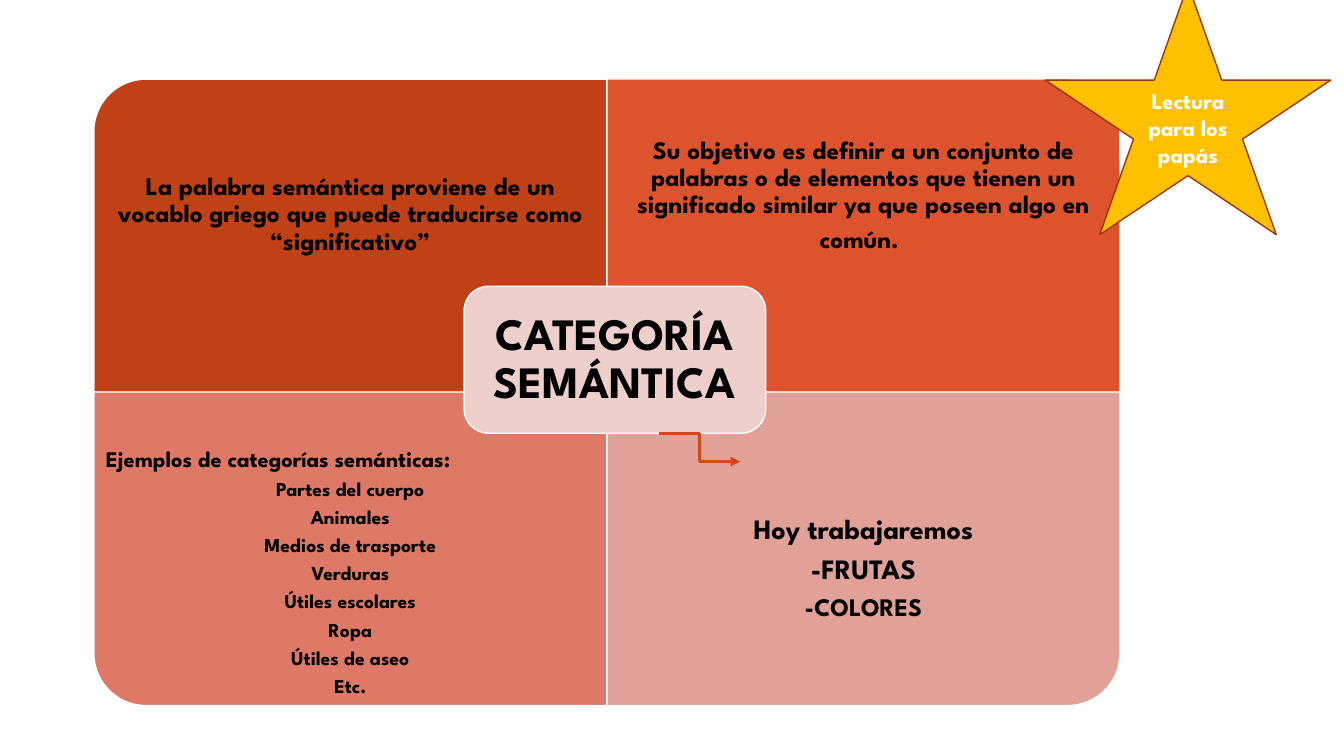
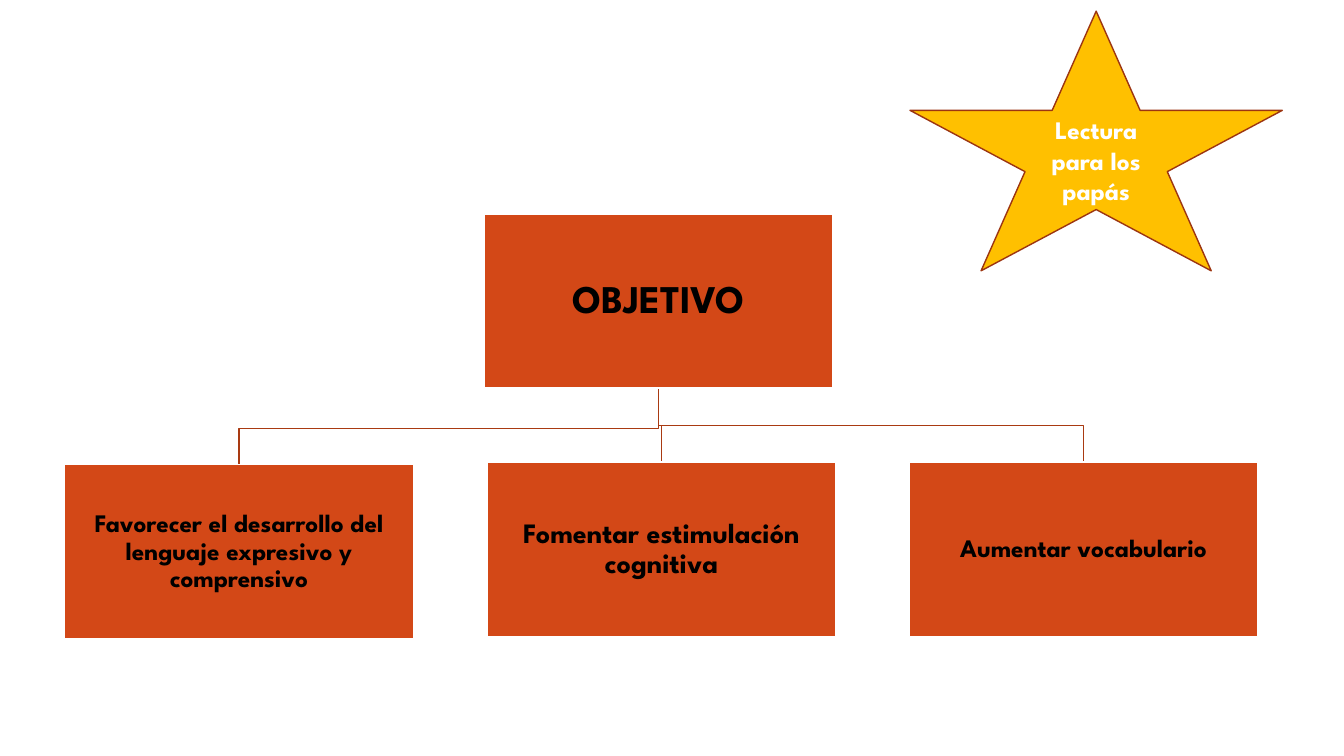
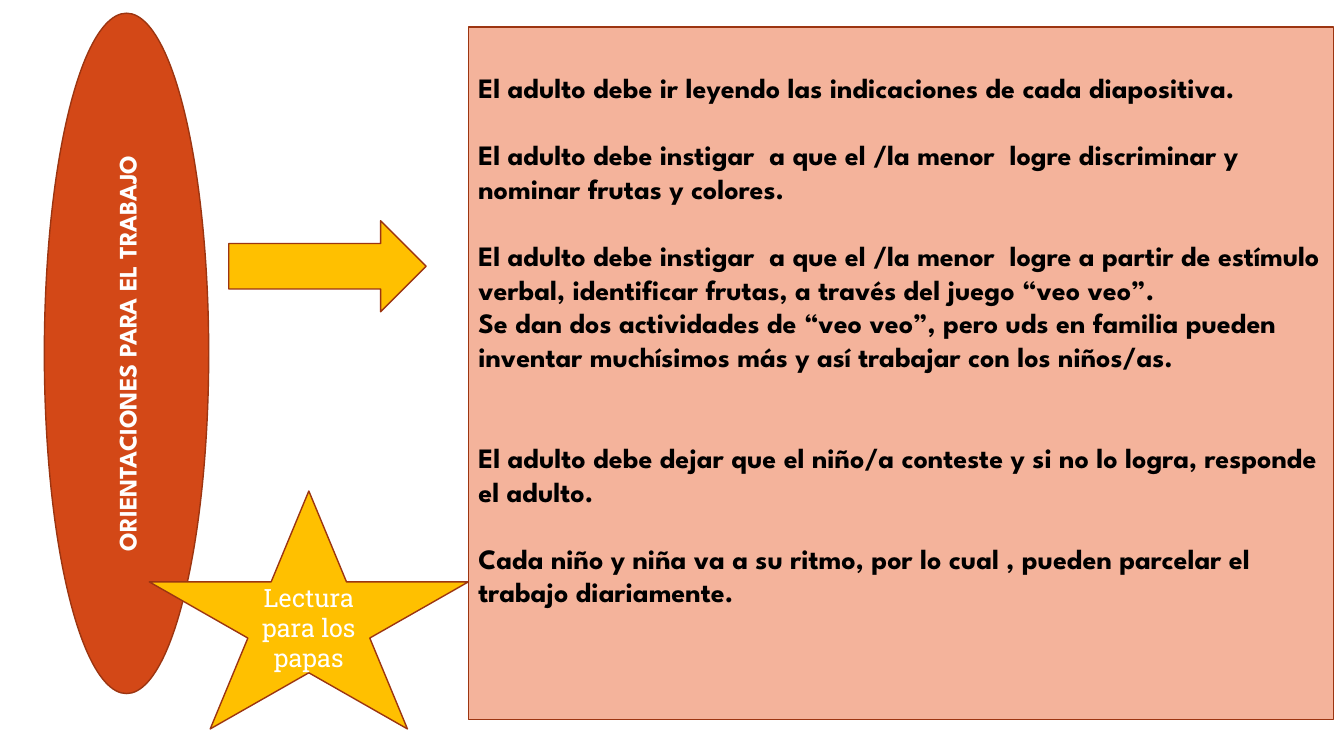
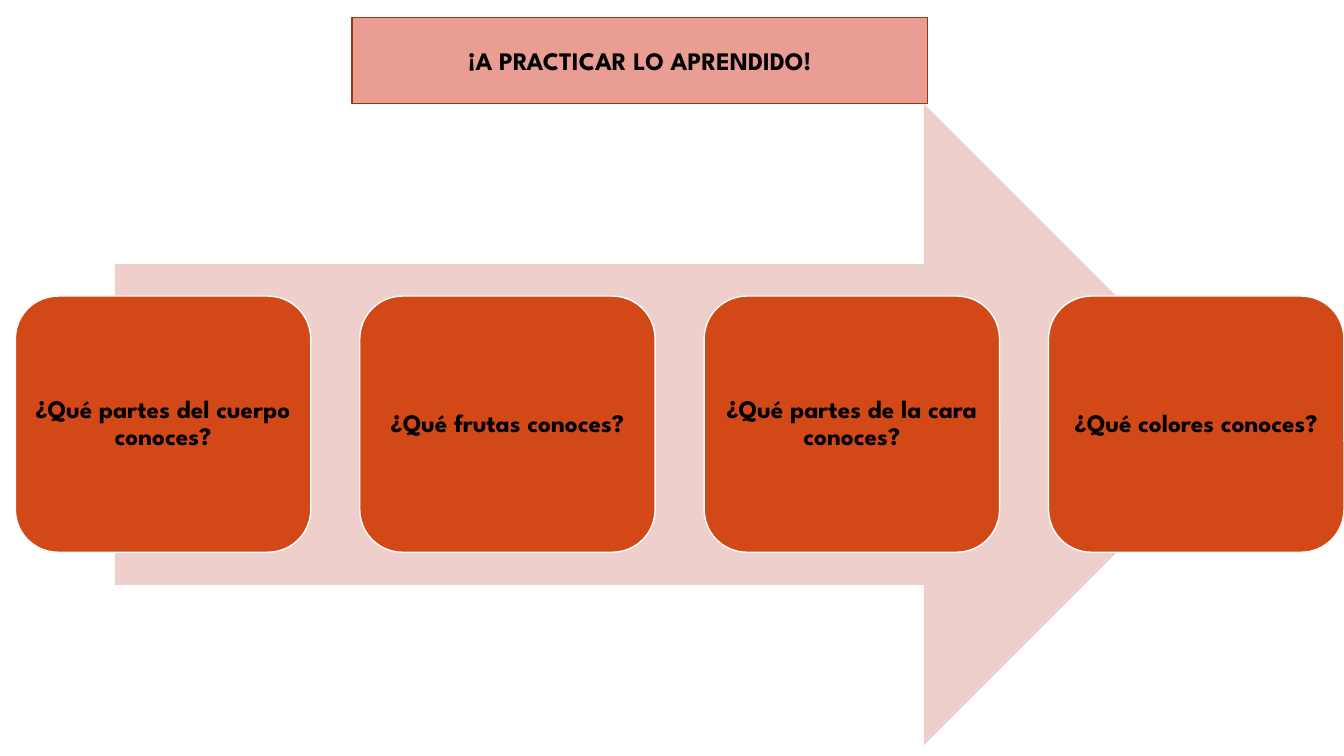
from dataclasses import dataclass

from lxml import etree
from pptx import Presentation
from pptx.dml.color import RGBColor
from pptx.enum.shapes import MSO_CONNECTOR, MSO_SHAPE
from pptx.enum.text import MSO_ANCHOR, PP_ALIGN
from pptx.oxml.ns import qn
from pptx.shapes.base import BaseShape
from pptx.slide import Slide
from pptx.text.text import TextFrame
from pptx.util import Pt

RECT = MSO_SHAPE.RECTANGLE
ROUND = MSO_SHAPE.ROUNDED_RECTANGLE
CORNER = MSO_SHAPE.ROUND_1_RECTANGLE
STAR = MSO_SHAPE.STAR_5_POINT
ARROW = MSO_SHAPE.RIGHT_ARROW
OVAL = MSO_SHAPE.OVAL
ELBOW = MSO_CONNECTOR.ELBOW
LEFT, MID = PP_ALIGN.LEFT, PP_ALIGN.CENTER
CENTER = MSO_ANCHOR.MIDDLE

SANS, SLAB = "League Spartan", "Roboto Slab"
BLACK, WHITE = "000000", "FFFFFF"
RUST, EDGE, LINK = "D34817", "9C3511", "A93A12"
GOLD, BLUSH, ROSE, PEACH = "FFC000", "EFCFCC", "E99D93", "F4B39B"
TIGHT = 0.9


@dataclass(frozen=True)
class Box:
    left: float
    top: float
    width: float
    height: float


@dataclass(frozen=True)
class Run:
    text: str
    size: float = 18
    hue: str = BLACK
    font: str = SANS
    bold: bool = True


@dataclass(frozen=True)
class Para:
    runs: tuple[Run, ...]
    align: PP_ALIGN = MID
    lead: float = 1
    before: float = 0
    after: float = 0


@dataclass(frozen=True)
class Pad:
    side: float = 7.2
    top: float = 3.6
    base: float = 3.6


@dataclass(frozen=True)
class Cell:
    fill: str
    turn: int
    pad: Pad
    paras: list[Para]


def color(code: str) -> RGBColor:
    return RGBColor.from_string(code)


def plain(text: str, size: float = 18, hue: str = BLACK) -> Para:
    return Para((Run(text, size, hue),))


def tight(text: str, size: float = 18, align: PP_ALIGN = MID) -> Para:
    return Para((Run(text, size),), align, TIGHT, after=0.35 * size)


def even(gap: float) -> Pad:
    return Pad(gap, gap, gap)


def write(frame: TextFrame, paras: list[Para], pad: Pad) -> None:
    frame.word_wrap = True
    frame.vertical_anchor = CENTER
    frame.margin_left = frame.margin_right = Pt(pad.side)
    frame.margin_top, frame.margin_bottom = Pt(pad.top), Pt(pad.base)
    for i, para in enumerate(paras):
        item = frame.add_paragraph() if i else frame.paragraphs[0]
        item.alignment = para.align
        item.line_spacing = para.lead
        item.space_before, item.space_after = Pt(para.before), Pt(para.after)
        for part in para.runs:
            run = item.add_run()
            run.text = part.text
            run.font.name = part.font
            run.font.size = Pt(part.size)
            run.font.bold = part.bold
            run.font.color.rgb = color(part.hue)


def draw(slide: Slide, kind: MSO_SHAPE, box: Box, fill: str, line: str | None = EDGE,
         paras: list[Para] | None = None, pad: Pad = Pad(), turn: int = 0) -> BaseShape:
    wide, high = box.width, box.height
    if turn % 180:
        wide, high = high, wide
    left = box.left + (box.width - wide) / 2
    top = box.top + (box.height - high) / 2
    shape = slide.shapes.add_shape(kind, Pt(left), Pt(top), Pt(wide), Pt(high))
    shape.rotation = turn
    shape.shadow.inherit = False
    shape.fill.solid()
    shape.fill.fore_color.rgb = color(fill)
    if line:
        shape.line.color.rgb = color(line)
        shape.line.width = Pt(1)
    else:
        shape.line.fill.background()
    if paras:
        write(shape.text_frame, paras, pad)
    return shape


def label(slide: Slide, box: Box, paras: list[Para], pad: Pad) -> None:
    frame = slide.shapes.add_textbox(
        Pt(box.left), Pt(box.top), Pt(box.width), Pt(box.height)).text_frame
    write(frame, paras, pad)


def star(slide: Slide, box: Box, run: Run) -> None:
    draw(slide, STAR, box, GOLD, paras=[Para((run,))])


def bent(slide: Slide, x: float, y: float, wide: float, high: float) -> None:
    link = slide.shapes.add_connector(ELBOW, Pt(x), Pt(y), Pt(x + wide), Pt(y + high))
    link.line.color.rgb = color(RUST)
    link.line.width = Pt(2.25)
    etree.SubElement(link.line._get_or_add_ln(), qn("a:tailEnd"), type="triangle")
    etree.SubElement(link._element.spPr, qn("a:effectLst"))


def branch(slide: Slide, root: Box, leaf: Box) -> None:
    start = root.left + root.width / 2
    end = leaf.left + leaf.width / 2
    bend = leaf.top - 26
    pen = slide.shapes.build_freeform(Pt(start), Pt(root.top + root.height))
    pen.add_line_segments(
        [(Pt(start), Pt(bend)), (Pt(end), Pt(bend)), (Pt(end), Pt(leaf.top))], close=False)
    shape = pen.convert_to_shape()
    shape.shadow.inherit = False
    shape.fill.background()
    shape.line.color.rgb = color(LINK)
    shape.line.width = Pt(1)


def themes(slide: Slide) -> None:
    topics = ["Partes del cuerpo", "Animales", "Medios de trasporte", "Verduras",
              "Útiles escolares", "Ropa", "Útiles de aseo", "Etc."]
    goal = Para((
        Run("Su objetivo es definir a un conjunto de palabras o de elementos que tienen "
            "un significado similar ya que poseen algo en común."),
        Run(" ", 24, WHITE, SLAB, False)), lead=TIGHT)
    cells = [
        Cell("BF4115", 270, Pad(10, 35.6, 10), [tight(
            "La palabra semántica proviene de un vocablo griego que puede traducirse "
            "como “significativo”")]),
        Cell("DD532E", 0, even(10), [goal]),
        Cell("DD7966", 180, Pad(8.6, 8.6, 30.6),
             [tight("Ejemplos de categorías semánticas:", 16, LEFT)]
             + [tight(topic, 14) for topic in topics]),
        Cell("E1A098", 90, Pad(11.5, 11.5, 39.2),
             [tight("Hoy trabajaremos", 20), tight("-FRUTAS", 20), tight("-COLORES")]),
    ]
    wide, high, text = 366.5, 224, 168
    for i, cell in enumerate(cells):
        row, col = divmod(i, 2)
        box = Box(67 + col * wide, 56.5 + row * 223.5, wide, high)
        draw(slide, CORNER, box, cell.fill, WHITE, turn=cell.turn)
        area = Box(box.left, box.top + row * (high - text), wide, text)
        label(slide, area, cell.paras, cell.pad)
    draw(slide, ROUND, Box(331.5, 204.5, 215.5, 105), BLUSH, WHITE,
         [tight("CATEGORÍA SEMÁNTICA", 32)], even(9.4))
    star(slide, Box(746.6, -11, 204, 178.6), Run("Lectura para los papás", 16, WHITE))
    bent(slide, 470.7, 309.5, 58, 20.3)


def goals(slide: Slide) -> None:
    star(slide, Box(650, 8, 266, 185.5), Run("Lectura para los papás", 18, WHITE))
    wide, high = 249, 124.5
    root = Box(346, 152.8, wide, high)
    leaves = [
        (Box(46.3, 332, wide, high),
         tight("Favorecer el desarrollo del lenguaje expresivo y comprensivo")),
        (Box(348, 330, wide, high), tight("Fomentar estimulación cognitiva", 20)),
        (Box(649.5, 330, wide, high), tight("Aumentar vocabulario")),
    ]
    for box, _ in reversed(leaves):
        branch(slide, root, box)
    for box, para in [(root, tight("OBJETIVO", 28)), *leaves]:
        draw(slide, RECT, box, RUST, WHITE, [para], even(1))


def guide(slide: Slide) -> None:
    draw(slide, OVAL, Box(31.7, 9.4, 117.4, 486), RUST,
         paras=[plain("ORIENTACIONES PARA EL TRABAJO", hue=WHITE)], turn=270)
    draw(slide, ARROW, Box(163.4, 157.7, 141, 65), GOLD)
    row = 24
    tips = [
        (0, "El adulto debe ir leyendo las indicaciones de cada diapositiva."),
        (1, "El adulto debe instigar  a que el /la menor  logre discriminar y nominar "
            "frutas y colores."),
        (1, "El adulto debe instigar  a que el /la menor  logre a partir de estímulo "
            "verbal, identificar frutas, a través del juego “veo veo”."),
        (0, "Se dan dos actividades de “veo veo”, pero uds en familia pueden inventar "
            "muchísimos más y así trabajar con los niños/as."),
        (2, "El adulto debe dejar que el niño/a conteste y si no lo logra, responde el "
            "adulto."),
        (1, "Cada niño y niña va a su ritmo, por lo cual , pueden parcelar el trabajo "
            "diariamente."),
    ]
    paras = [Para((Run(text, 20),), LEFT, before=gap * row) for gap, text in tips]
    draw(slide, RECT, Box(334.6, 19.3, 617.8, 494.5), PEACH, paras=paras,
         pad=Pad(base=3.6 + 2 * row))
    star(slide, Box(106.6, 350.7, 228, 170),
         Run("Lectura para los papas", 18, WHITE, SLAB, False))


def drill(slide: Slide) -> None:
    draw(slide, RECT, Box(251.5, 12.6, 411, 61.2), ROSE,
         paras=[plain("¡A PRACTICAR LO APRENDIDO!")])
    draw(slide, ARROW, Box(82, 74.2, 807, 458), BLUSH, None)
    asks = ["¿Qué partes del cuerpo conoces?", "¿Qué frutas conoces?",
            "¿Qué partes de la cara conoces?", "¿Qué colores conoces?"]
    for i, ask in enumerate(asks):
        draw(slide, ROUND, Box(11 + i * 246, 211.5, 211, 183), RUST, WHITE,
             [tight(ask)], even(5))


def main() -> None:
    deck = Presentation()
    deck.slide_width, deck.slide_height = Pt(960), Pt(540)
    for build in (themes, goals, guide, drill):
        build(deck.slides.add_slide(deck.slide_layouts[6]))
    deck.save("out.pptx")


if __name__ == "__main__":
    main()
